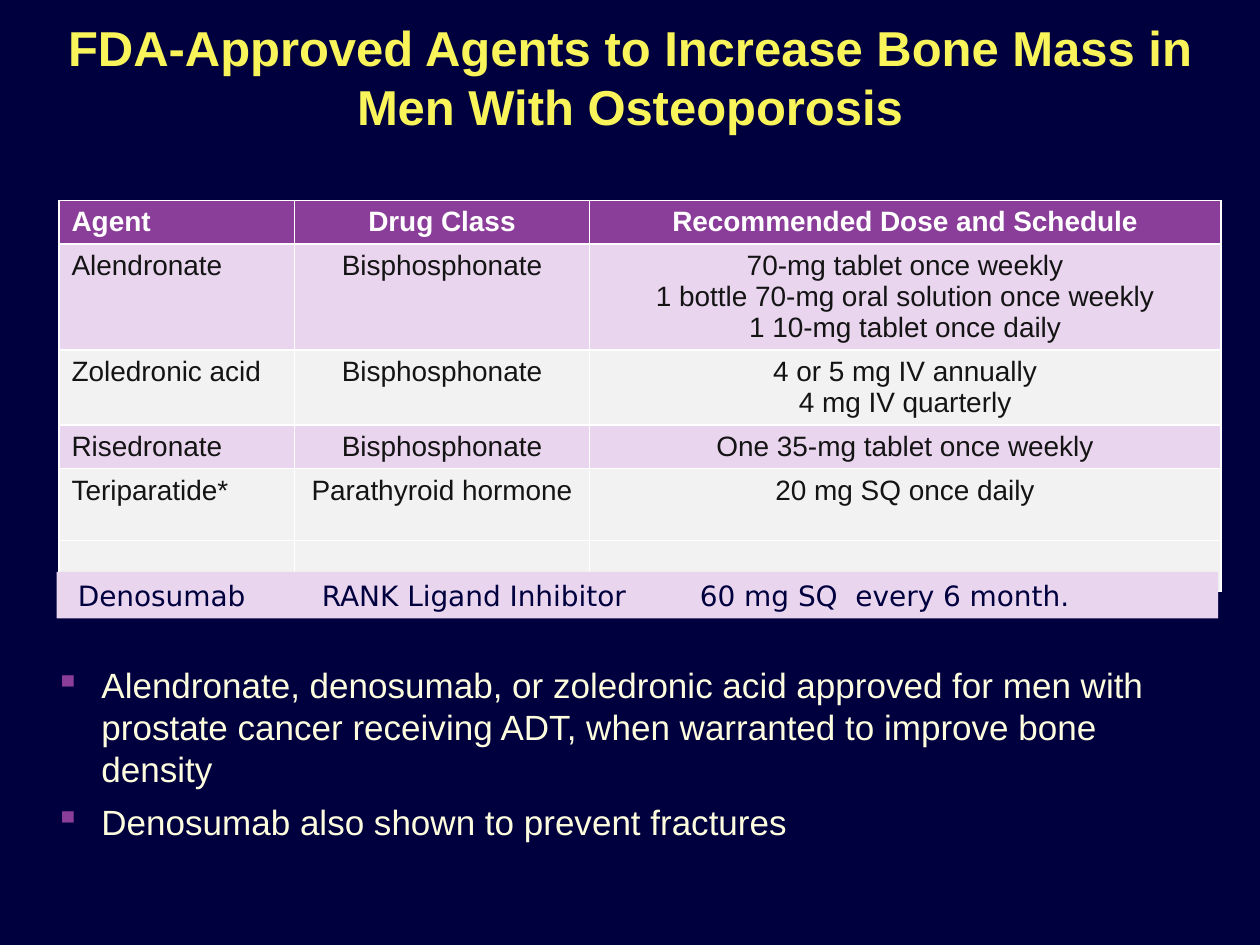
import dataclasses

import lxml.etree
import pptx
import pptx.dml.color
import pptx.enum.shapes
import pptx.enum.text
import pptx.oxml.ns
import pptx.util

Cm = pptx.util.Cm
ALIGN = pptx.enum.text.PP_ALIGN
ANCHOR = pptx.enum.text.MSO_ANCHOR


@dataclasses.dataclass(frozen=True)
class Theme:
    navy: str = "00003E"
    yellow: str = "F8F45A"
    cream: str = "FEFDDE"
    purple: str = "8B3D9A"
    lilac: str = "EAD5EE"
    grey: str = "F2F2F2"
    ink: str = "141415"
    white: str = "FFFFFF"
    font: str = "Arial"
    bar_font: str = "DejaVu Sans"
    title_size: int = 28
    bullet_size: int = 20
    table_size: int = 16


THEME = Theme()

ROWS = [
    ("Agent", "Drug Class", "Recommended Dose and Schedule"),
    ("Alendronate", "Bisphosphonate",
     "70-mg tablet once weekly\n1 bottle 70-mg oral solution once weekly\n"
     "1 10-mg tablet once daily"),
    ("Zoledronic acid", "Bisphosphonate",
     "4 or 5 mg IV annually\n4 mg IV quarterly"),
    ("Risedronate", "Bisphosphonate", "One 35-mg tablet once weekly"),
    ("Teriparatide*", "Parathyroid hormone", "20 mg SQ once daily"),
    ("", "", ""),
]
COLUMN_WIDTHS = (4.75, 5.94, 12.73)
ROW_HEIGHTS = (0.81, 2.08, 1.45, 0.81, 1.45, 0.81)
BULLETS = [
    "Alendronate, denosumab, or zoledronic acid approved for men with "
    "prostate cancer receiving ADT, when warranted to improve bone density",
    "Denosumab also shown to prevent fractures",
]


def rgb(value):
    return pptx.dml.color.RGBColor.from_string(value)


def paint(item, color):
    item.fill.solid()
    item.fill.fore_color.rgb = rgb(color)


def add_element(parent, tag, **attributes):
    return lxml.etree.SubElement(
        parent, pptx.oxml.ns.qn(tag),
        {name: str(value) for name, value in attributes.items()})


def write_text(frame, text, size, color, font=THEME.font, bold=False,
               align=ALIGN.LEFT, gap=0, bullet=None, indent=0, tabs=()):
    """Write one paragraph per line of text, all in the same format."""
    frame.word_wrap = True
    for index, line in enumerate(text.split("\n")):
        para = frame.add_paragraph() if index else frame.paragraphs[0]
        para.text = line
        para.alignment = align
        para.space_before = pptx.util.Pt(gap if index else 0)
        properties = para._p.get_or_add_pPr()
        if bullet:
            properties.set("marL", str(indent))
            properties.set("indent", str(-indent))
            add_element(add_element(properties, "a:buClr"), "a:srgbClr",
                        val=THEME.purple)
            add_element(properties, "a:buChar", char=bullet)
        if tabs:
            stops = add_element(properties, "a:tabLst")
            for stop in tabs:
                add_element(stops, "a:tab", pos=Cm(stop), algn="l")
        para.font.size = pptx.util.Pt(size)
        para.font.name = font
        para.font.bold = bold
        para.font.color.rgb = rgb(color)


def add_plain_shape(page, kind, box):
    shape = page.shapes.add_shape(kind, *map(Cm, box))
    shape.shadow.inherit = False
    shape.line.fill.background()
    shape.text_frame.vertical_anchor = ANCHOR.TOP
    return shape


def place_title(page, box):
    title = page.shapes.title
    title.left, title.top, title.width, title.height = map(Cm, box)
    paint(title, THEME.navy)
    title.text_frame.vertical_anchor = ANCHOR.MIDDLE
    write_text(title.text_frame,
               "FDA-Approved Agents to Increase Bone Mass in Men With Osteoporosis",
               THEME.title_size, THEME.yellow, bold=True, align=ALIGN.CENTER)


def place_agent_table(page, box):
    table = page.shapes.add_table(
        len(ROWS), len(COLUMN_WIDTHS), *map(Cm, box)).table
    for column, width in zip(table.columns, COLUMN_WIDTHS):
        column.width = Cm(width)
    for row, height in zip(table.rows, ROW_HEIGHTS):
        row.height = Cm(height)
    for row_index, texts in enumerate(ROWS):
        header = row_index == 0
        # Rows alternate; the empty last row continues the one above it
        band = THEME.lilac if row_index in (1, 3) else THEME.grey
        for column_index, text in enumerate(texts):
            cell = table.cell(row_index, column_index)
            paint(cell, THEME.purple if header else band)
            cell.vertical_anchor = ANCHOR.MIDDLE if header else ANCHOR.TOP
            if text:
                write_text(cell.text_frame, text, THEME.table_size,
                           THEME.white if header else THEME.ink, bold=header,
                           align=ALIGN.CENTER if column_index else ALIGN.LEFT)


def place_denosumab_bar(page, box):
    bar = add_plain_shape(page, pptx.enum.shapes.MSO_SHAPE.RECTANGLE, box)
    paint(bar, THEME.lilac)
    bar.text_frame.margin_left = Cm(0.43)
    write_text(bar.text_frame,
               "Denosumab\tRANK Ligand Inhibitor\t60 mg SQ  every 6 month.",
               THEME.table_size, THEME.navy, font=THEME.bar_font,
               tabs=(4.92, 12.54))


def place_bullets(page, box):
    panel = add_plain_shape(
        page, pptx.enum.shapes.MSO_SHAPE.ROUNDED_RECTANGLE, box)
    panel.fill.background()
    panel.text_frame.margin_left = panel.text_frame.margin_right = 0
    write_text(panel.text_frame, "\n".join(BULLETS), THEME.bullet_size,
               THEME.cream, gap=6, bullet="▪", indent=Cm(0.94))


def main():
    deck = pptx.Presentation()
    deck.slide_width, deck.slide_height = Cm(25.4), Cm(19.05)
    page = deck.slides.add_slide(deck.slide_layouts[5])
    paint(page.background, THEME.navy)
    place_title(page, (0, 0, 25.4, 3.07))
    place_agent_table(page, (1.19, 4.04, 23.42, 7.41))
    place_denosumab_bar(page, (1.14, 11.53, 23.42, 0.94))
    place_bullets(page, (0.91, 13.06, 23.57, 4.01))
    deck.save("out.pptx")


if __name__ == "__main__":
    main()
